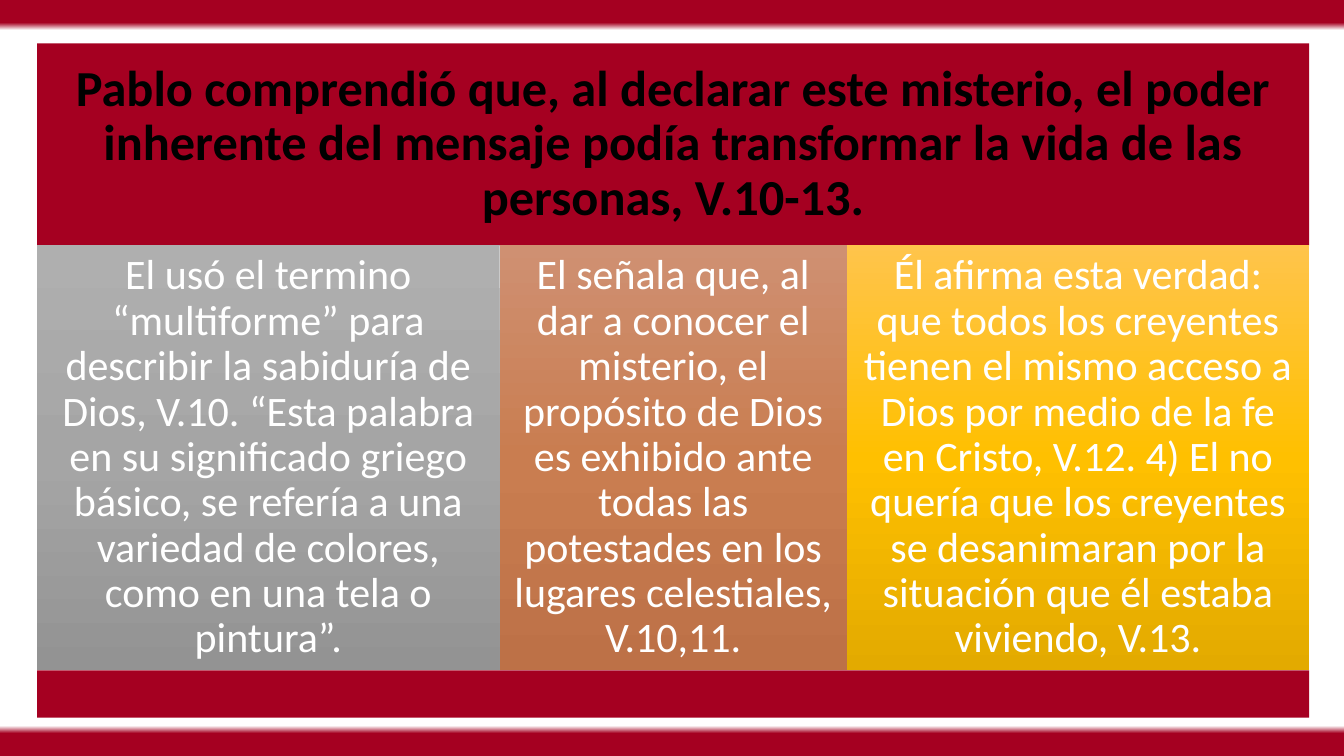
from lxml.etree import SubElement
from pptx import Presentation
from pptx.dml.color import RGBColor
from pptx.enum.shapes import MSO_SHAPE
from pptx.enum.text import MSO_ANCHOR, MSO_AUTO_SIZE, PP_ALIGN
from pptx.oxml.ns import qn
from pptx.util import Pt

COLORS = {"crimson": "A50021", "white": "FFFFFF", "black": "000000"}
BACKGROUND_STOPS = [(3, COLORS["crimson"]), (4, COLORS["white"]),
                    (96, COLORS["white"]), (97, COLORS["crimson"])]
LEFT, WIDTH = 26.6, 908.6
HEADER_TOP, COLUMNS_TOP, FOOTER_TOP, FOOTER_BOTTOM = 31, 175.2, 478.8, 512.6

HEADING = ("Pablo comprendió que, al declarar este misterio, el poder inherente "
           "del mensaje podía transformar la vida de las personas, V.10-13.")
# Width, gradient colours from top to bottom, text
COLUMNS = [
    (330.3, ("AFAFAF", "A5A5A5", "939393"),
     "El usó el termino “multiforme” para describir la sabiduría de Dios, V.10. "
     "“Esta palabra en su significado griego básico, se refería a una variedad "
     "de colores, como en una tela o pintura”."),
    (248, ("CF9072", "C97D50", "BD7147"),
     "El señala que, al dar a conocer el misterio, el propósito de Dios es "
     "exhibido ante todas las potestades en los lugares celestiales, V.10,11."),
    (330.3, ("FFC44B", "FFC000", "E3AA00"),
     "Él afirma esta verdad: que todos los creyentes tienen el mismo acceso a "
     "Dios por medio de la fe en Cristo, V.12. 4) El no quería que los creyentes "
     "se desanimaran por la situación que él estaba viviendo, V.13."),
]


def place(shape, left, top, width, height):
    shape.left, shape.top = Pt(left), Pt(top)
    shape.width, shape.height = Pt(width), Pt(height)


def fill_solid(shape, color):
    shape.fill.solid()
    shape.fill.fore_color.rgb = RGBColor.from_string(color)


def fill_gradient(owner, fill, stops):
    """Fill from top to bottom with (percent, colour) stops."""
    fill.gradient()
    fill.gradient_angle = 270
    stop_list = next(owner.element.iter(qn("a:gsLst")))
    for old_stop in list(stop_list):
        stop_list.remove(old_stop)
    for percent, color in stops:
        stop = SubElement(stop_list, qn("a:gs"), pos=str(percent * 1000))
        SubElement(stop, qn("a:srgbClr"), val=color)


def add_panel(slide, left, top, width, height):
    panel = slide.shapes.add_shape(
        MSO_SHAPE.RECTANGLE, Pt(left), Pt(top), Pt(width), Pt(height))
    panel.shadow.inherit = False
    panel.line.fill.background()
    return panel


def write_text(shape, text, size, color, inset, bold=False):
    frame = shape.text_frame
    frame.text = text
    frame.word_wrap = True
    frame.auto_size = MSO_AUTO_SIZE.NONE
    frame.vertical_anchor = MSO_ANCHOR.MIDDLE
    frame.margin_left = frame.margin_right = Pt(inset)
    frame.margin_top = frame.margin_bottom = Pt(inset)
    paragraph = frame.paragraphs[0]
    paragraph.alignment = PP_ALIGN.CENTER
    paragraph.line_spacing = 0.9
    paragraph.font.name = "Calibri"
    paragraph.font.size = Pt(size)
    paragraph.font.bold = bold
    paragraph.font.color.rgb = RGBColor.from_string(color)


def add_heading(slide):
    heading = slide.shapes.title
    place(heading, LEFT, HEADER_TOP, WIDTH, COLUMNS_TOP - HEADER_TOP)
    fill_solid(heading, COLORS["crimson"])
    write_text(heading, HEADING, 36, COLORS["black"], 10.8, bold=True)


def add_columns(slide):
    left = LEFT
    for width, gradient, text in COLUMNS:
        column = add_panel(slide, left, COLUMNS_TOP, width, FOOTER_TOP - COLUMNS_TOP)
        fill_gradient(column, column.fill, zip((0, 50, 100), gradient))
        write_text(column, text, 30, COLORS["white"], 8.4)
        left += width


def add_footer(slide):
    footer = add_panel(slide, LEFT, FOOTER_TOP, WIDTH, FOOTER_BOTTOM - FOOTER_TOP)
    fill_solid(footer, COLORS["crimson"])


def main():
    presentation = Presentation()
    presentation.slide_width, presentation.slide_height = Pt(960), Pt(540)
    slide = presentation.slides.add_slide(presentation.slide_layouts[5])
    fill_gradient(slide, slide.background.fill, BACKGROUND_STOPS)
    add_heading(slide)
    add_columns(slide)
    add_footer(slide)
    presentation.save("out.pptx")


if __name__ == "__main__":
    main()
